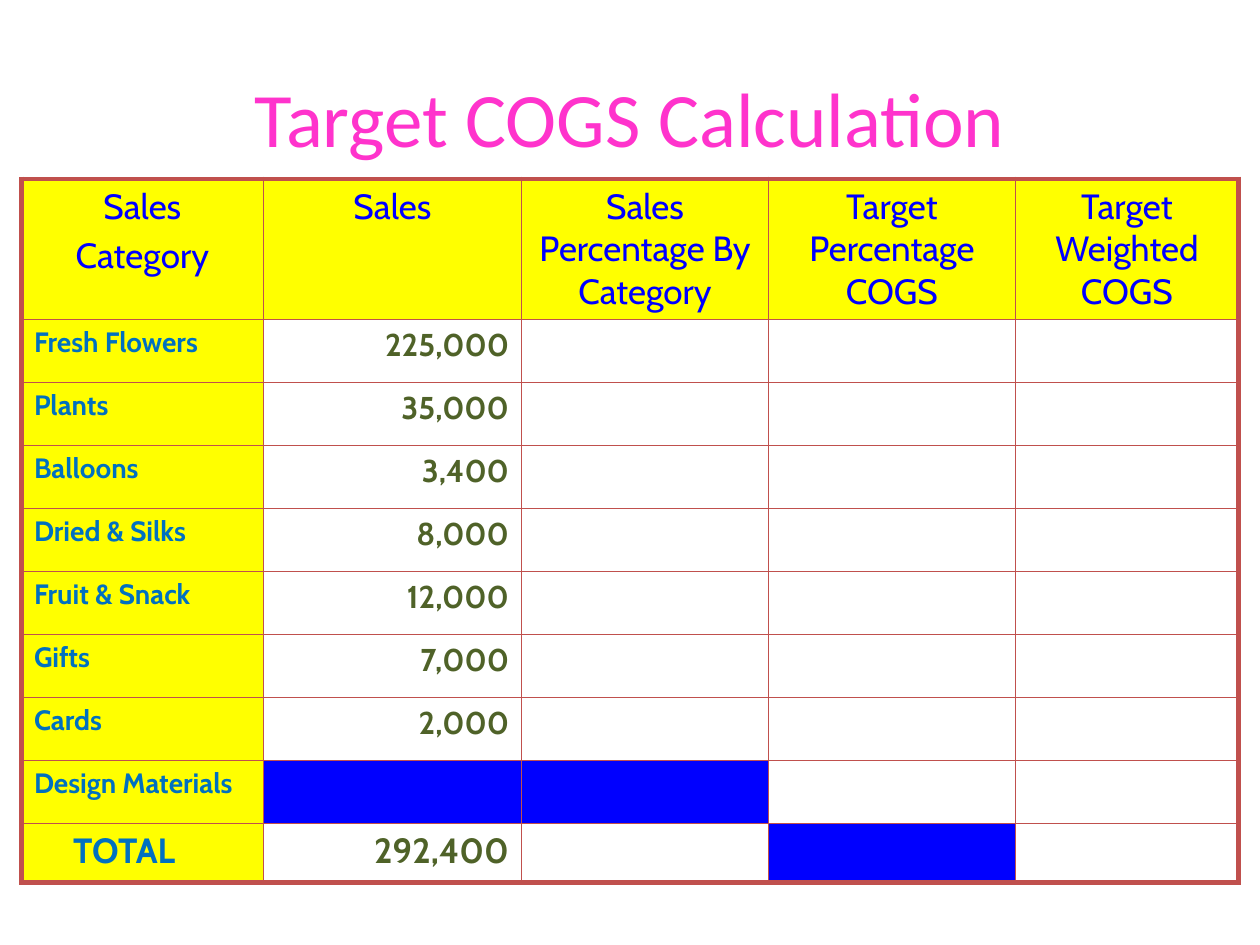
"""Build the target COGS calculation slide."""
from dataclasses import dataclass

from lxml import etree
from pptx import Presentation
from pptx.dml.color import RGBColor
from pptx.enum.dml import MSO_PATTERN
from pptx.enum.text import MSO_ANCHOR, PP_ALIGN
from pptx.oxml.ns import qn
from pptx.util import Inches, Pt

LEFT, CENTER, RIGHT = PP_ALIGN.LEFT, PP_ALIGN.CENTER, PP_ALIGN.RIGHT
MIDDLE = MSO_ANCHOR.MIDDLE
DIAGONAL = MSO_PATTERN.WIDE_UPWARD_DIAGONAL
TITLE_ONLY = 5


@dataclass(frozen=True)
class Theme:
    """Colours, fonts and type sizes of the slide."""
    title_font: str = "Calibri"
    body_font: str = "Cabin"
    title: str = "FF33CC"
    heading: str = "0000FF"
    category: str = "0070C0"
    amount: str = "4F6228"
    label_fill: str = "FFFF00"
    blocked_fill: str = "0000FF"
    border: str = "C0504D"
    title_size: int = 44
    large_size: int = 20
    amount_size: int = 18
    category_size: int = 16
    outer_line: int = 3
    inner_line: int = 1


THEME = Theme()
SLIDE_WIDTH, SLIDE_HEIGHT = Inches(10), Inches(7.5)
TABLE_LEFT, TABLE_TOP = Inches(0.17), Inches(1.42)
COLUMN_WIDTHS = [1.92, 2.05, 1.96, 1.96, 1.77]
HEADER_HEIGHT, BODY_HEIGHT, TOTAL_HEIGHT = 1.1, 0.5, 0.47
HEADINGS = [
    "Sales\nCategory", "Sales", "Sales Percentage By Category",
    "Target Percentage COGS", "Target Weighted COGS",
]
SALES = [
    ("Fresh Flowers", "225,000"), ("Plants", "35,000"), ("Balloons", "3,400"),
    ("Dried & Silks", "8,000"), ("Fruit & Snack", "12,000"),
    ("Gifts", "7,000"), ("Cards", "2,000"), ("Design Materials", ""),
]
TOTAL = ("TOTAL", "292,400")
TOTAL_ROW = len(SALES) + 1
BLOCKED = {(TOTAL_ROW - 1, 1), (TOTAL_ROW - 1, 2), (TOTAL_ROW, 3)}


def write(frame, text, *, size, color, font=THEME.body_font, bold=False, align=LEFT):
    """Write each line of text as a formatted paragraph."""
    for index, line in enumerate(text.split("\n")):
        para = frame.add_paragraph() if index else frame.paragraphs[0]
        para.alignment = align
        if index:
            para.space_before = Pt(size * 0.2)
        span = para.add_run()
        span.text = line
        span.font.name = font
        span.font.size = Pt(size)
        span.font.bold = bold
        span.font.color.rgb = RGBColor.from_string(color)


def add_title(page, text):
    """Place and format the title placeholder."""
    box = page.shapes.title
    box.left, box.top = int(SLIDE_WIDTH * 0.05), int(SLIDE_HEIGHT * 0.04)
    box.width, box.height = int(SLIDE_WIDTH * 0.9), SLIDE_HEIGHT // 6
    box.text_frame.vertical_anchor = MIDDLE
    write(box.text_frame, text, size=THEME.title_size, color=THEME.title,
          font=THEME.title_font, align=CENTER)


def set_borders(cell, outer_sides):
    """Draw the four cell borders, thicker on the outer sides."""
    properties = cell._tc.get_or_add_tcPr()
    for side in "LRTB":
        points = THEME.outer_line if side in outer_sides else THEME.inner_line
        line = etree.SubElement(properties, qn(f"a:ln{side}"), w=str(Pt(points)))
        fill = etree.SubElement(line, qn("a:solidFill"))
        etree.SubElement(fill, qn("a:srgbClr"), val=THEME.border)


def set_fill(cell, row, column):
    """Fill label cells and blocked cells, leaving the others clear."""
    if (row, column) in BLOCKED:
        cell.fill.patterned()
        cell.fill.pattern = DIAGONAL
        blue = RGBColor.from_string(THEME.blocked_fill)
        cell.fill.fore_color.rgb = cell.fill.back_color.rgb = blue
    elif row == 0 or column == 0:
        cell.fill.solid()
        cell.fill.fore_color.rgb = RGBColor.from_string(THEME.label_fill)
    else:
        cell.fill.background()


def style_cells(table):
    """Give every cell its borders and fill."""
    edges = {"L": (1, 0), "R": (1, len(COLUMN_WIDTHS) - 1),
             "T": (0, 0), "B": (0, TOTAL_ROW)}
    for row in range(len(table.rows)):
        for column in range(len(table.columns)):
            cell = table.cell(row, column)
            outer = [side for side, (axis, place) in edges.items()
                     if (row, column)[axis] == place]
            set_borders(cell, outer)
            set_fill(cell, row, column)


def add_sales_table(page):
    """Add the table of sales by category."""
    heights = [HEADER_HEIGHT] + [BODY_HEIGHT] * len(SALES) + [TOTAL_HEIGHT]
    table = page.shapes.add_table(
        len(heights), len(COLUMN_WIDTHS), TABLE_LEFT, TABLE_TOP,
        Inches(sum(COLUMN_WIDTHS)), Inches(sum(heights))).table
    table.first_row = table.horz_banding = False
    for column, width in zip(table.columns, COLUMN_WIDTHS):
        column.width = Inches(width)
    for row, height in zip(table.rows, heights):
        row.height = Inches(height)
    style_cells(table)
    for column, heading in enumerate(HEADINGS):
        write(table.cell(0, column).text_frame, heading, size=THEME.large_size,
              color=THEME.heading, align=CENTER)
    for row, (category, amount) in enumerate(SALES + [TOTAL], start=1):
        is_total = row == TOTAL_ROW
        write(table.cell(row, 0).text_frame, category, bold=True, color=THEME.category,
              size=THEME.large_size if is_total else THEME.category_size)
        if amount:
            write(table.cell(row, 1).text_frame, amount, bold=True,
                  color=THEME.amount, align=RIGHT,
                  size=THEME.large_size if is_total else THEME.amount_size)
    table.cell(TOTAL_ROW, 0).margin_left = Inches(0.41)


def main():
    """Build and save the deck."""
    deck = Presentation()
    deck.slide_width, deck.slide_height = SLIDE_WIDTH, SLIDE_HEIGHT
    page = deck.slides.add_slide(deck.slide_layouts[TITLE_ONLY])
    add_title(page, "Target COGS Calculation")
    add_sales_table(page)
    deck.save("out.pptx")


if __name__ == "__main__":
    main()
